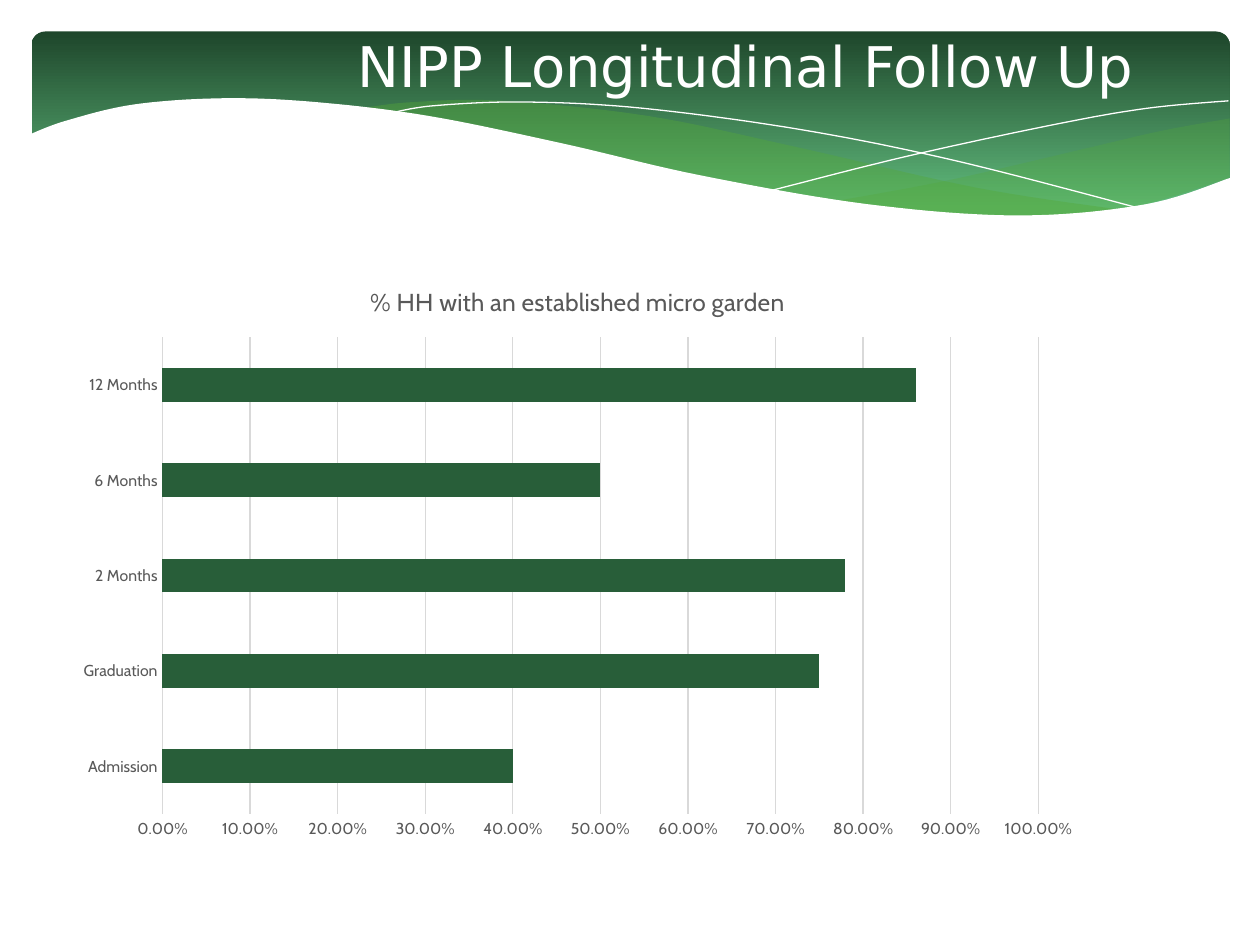
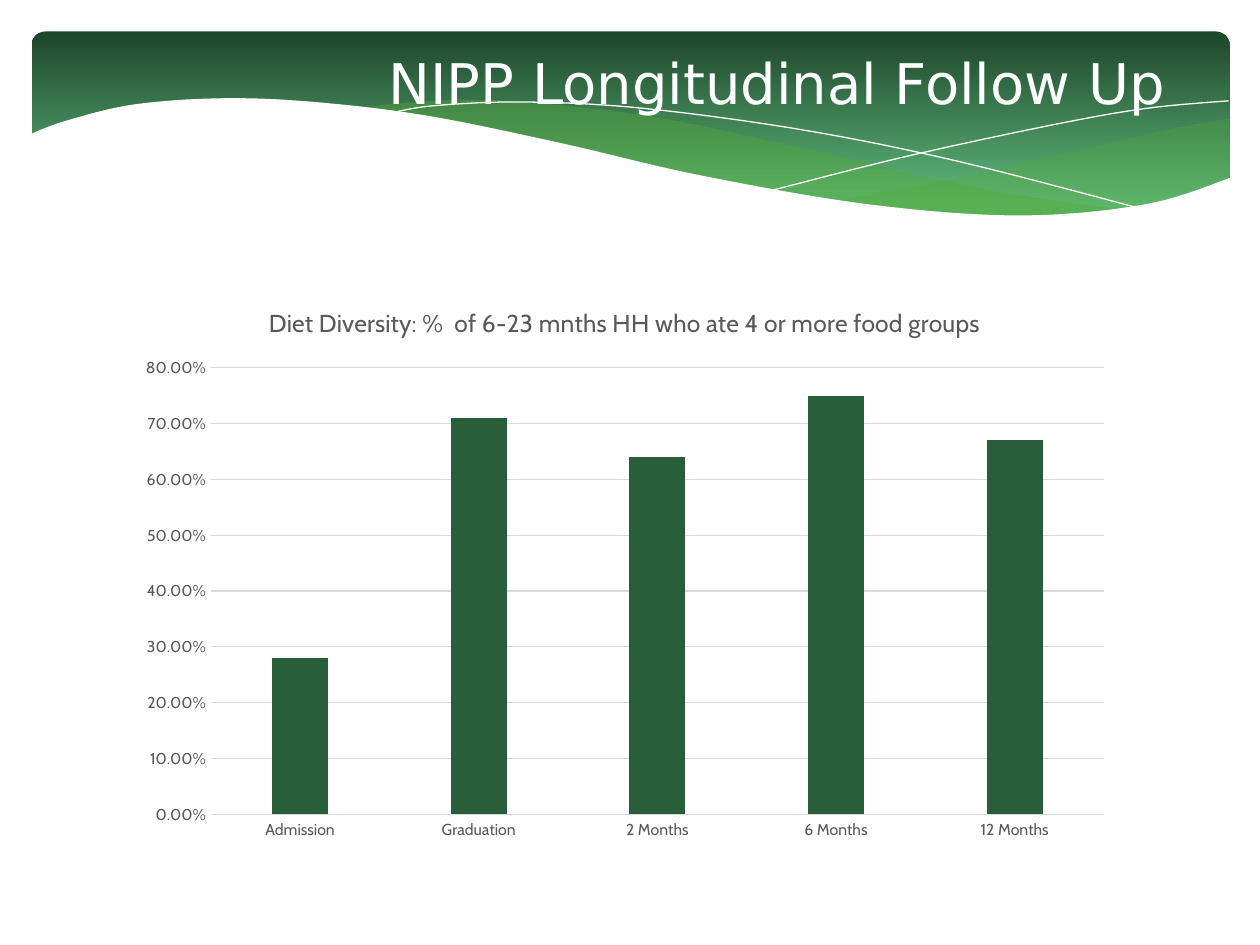
from dataclasses import dataclass
from itertools import chain
from typing import Any

from pptx import Presentation
from pptx.chart.data import CategoryChartData as ChartData
from pptx.dml.color import RGBColor
from pptx.enum.chart import XL_CHART_TYPE as Kind, XL_TICK_MARK as Tick
from pptx.enum.shapes import MSO_SHAPE as Form
from pptx.enum.text import MSO_ANCHOR as Anchor, PP_ALIGN as Align
from pptx.oxml.ns import qn
from pptx.util import Emu, Pt
from lxml.etree import SubElement

PX = 9144
STEPS = 10
WHITE, LEAF, BAR = "FFFFFF", "54A838", "285E39"
DARK, MINT = "1E462B", "61BC7D"
GREY, RULE = "595959", "D9D9D9"
HEAD, BODY = "DejaVu Sans", "Cabin"
TITLE = "NIPP Longitudinal Follow Up"
STAGES = ("Admission", "Graduation", "2 Months", "6 Months", "12 Months")

Knot = tuple[float, float]
Curve = tuple[Knot, ...]


@dataclass(frozen=True)
class Box:
    left: int
    top: int
    width: int
    height: int

    def emu(self) -> tuple[Emu, ...]:
        sides = (self.left, self.top, self.width, self.height)
        return tuple(Emu(side * PX) for side in sides)


@dataclass(frozen=True)
class Wave:
    curves: tuple[Curve, ...]
    fill: str | None = None
    alpha: int = 100


@dataclass(frozen=True)
class Graph:
    title: str
    kind: Any
    box: Box
    vals: tuple[float, ...]
    top: float
    gap: int
    lap: int


@dataclass(frozen=True)
class Page:
    head: Box
    graph: Graph


BAND = Box(25, 25, 951, 156)

WAVES = (
    Wave((
        ((976, 94), (921, 104), (861, 118), (753, 143), (661, 160)),
        ((661, 160), (757, 170), (835, 172), (905, 163), (976, 141)),
    ), LEAF, 29),
    Wave((
        ((893, 167), (775, 149), (629, 116), (514, 92), (399, 80), (328, 81),
         (286, 86)),
        ((286, 86), (362, 97), (449, 116), (566, 143), (680, 163), (773, 172),
         (838, 172), (893, 167)),
    ), LEAF, 40),
    Wave((((309, 90), (344, 84), (416, 81), (510, 86), (636, 103), (760, 128),
           (907, 166)),)),
    Wave((((613, 151), (720, 124), (836, 99), (910, 86), (975, 80)),)),
    Wave((
        ((977, 141), (910, 162), (809, 171), (688, 162), (555, 139), (447, 114),
         (340, 92), (250, 81), (177, 78), (106, 83), (52, 96), (23, 107)),
        ((23, 224), (977, 224)),
    ), WHITE),
)

PAGES = (
    Page(Box(142, -17, 900, 137), Graph(
        "% HH with an established micro garden", Kind.BAR_CLUSTERED,
        Box(50, 208, 817, 467), (0.4, 0.75, 0.78, 0.5, 0.86), 1.0, 182, 0)),
    Page(Box(167, -3, 900, 137), Graph(
        "Diet Diversity: %  of 6-23 mnths HH who ate 4 or more food groups",
        Kind.COLUMN_CLUSTERED, Box(100, 225, 792, 450),
        (0.28, 0.71, 0.64, 0.75, 0.67), 0.8, 219, -27)),
)


def tint(code: str) -> RGBColor:
    return RGBColor.from_string(code)


def style(font: Any, size: int, ink: str, face: str) -> None:
    font.size, font.name, font.bold = Pt(size), face, False
    font.color.rgb = tint(ink)


def write(frame: Any, text: str, *, size: int, ink: str, face: str) -> None:
    para = frame.paragraphs[0]
    para.alignment = Align.CENTER
    run = para.add_run()
    run.text = text
    style(run.font, size, ink, face)


def stroke(line: Any, ink: str, width: float) -> None:
    line.color.rgb = tint(ink)
    line.width = Pt(width)


def blend(a: float, b: float, c: float, d: float, t: float) -> float:
    bend = 2 * a - 5 * b + 4 * c - d
    twist = 3 * (b - c) + d - a
    return b + t * (c - a + t * (bend + t * twist)) / 2


def smooth(curve: Curve) -> list[Knot]:
    ends = (curve[0], *curve, curve[-1])
    dots = [
        tuple(blend(*axis, step / STEPS) * PX for axis in zip(*span))
        for span in zip(ends, ends[1:], ends[2:], ends[3:])
        for step in range(STEPS)
    ]
    return [*dots, tuple(side * PX for side in curve[-1])]


def draw_band(slide: Any) -> None:
    band = slide.shapes.add_shape(Form.ROUNDED_RECTANGLE, *BAND.emu())
    band.shadow.inherit = False
    band.adjustments[0] = 0.07
    band.line.fill.background()
    band.fill.gradient()
    band.fill.gradient_angle = 270
    for stop, ink, spot in zip(band.fill.gradient_stops, (DARK, MINT), (0, 0.9)):
        stop.color.rgb = tint(ink)
        stop.position = spot


def draw_wave(slide: Any, wave: Wave) -> None:
    first, *rest = chain.from_iterable(map(smooth, wave.curves))
    pen = slide.shapes.build_freeform(*first)
    pen.add_line_segments(rest, close=wave.fill is not None)
    shape = pen.convert_to_shape()
    shape.shadow.inherit = False
    if wave.fill is None:
        shape.fill.background()
        stroke(shape.line, WHITE, 0)
        return
    shape.fill.solid()
    shape.fill.fore_color.rgb = tint(wave.fill)
    shape.line.fill.background()
    if wave.alpha < 100:
        ink = next(shape.element.spPr.iter(qn("a:srgbClr")))
        SubElement(ink, qn("a:alpha")).set("val", str(wave.alpha * 1000))


def draw_head(slide: Any, box: Box) -> None:
    frame = slide.shapes.add_textbox(*box.emu()).text_frame
    frame.word_wrap = True
    frame.vertical_anchor = Anchor.MIDDLE
    write(frame, TITLE, size=32, ink=WHITE, face=HEAD)


def draw_graph(slide: Any, graph: Graph) -> None:
    data = ChartData(number_format="0.00%")
    data.categories = STAGES
    data.add_series("Series 1", graph.vals)
    chart = slide.shapes.add_chart(graph.kind, *graph.box.emu(), data).chart
    style(chart.font, 10, "000000", BODY)
    chart.has_legend = False
    chart.has_title = True
    write(chart.chart_title.text_frame, graph.title, size=14, ink=GREY, face=BODY)

    plot = chart.plots[0]
    plot.vary_by_categories = False
    plot.gap_width, plot.overlap = graph.gap, graph.lap
    fill = plot.series[0].format.fill
    fill.solid()
    fill.fore_color.rgb = tint(BAR)

    cats, vals = chart.category_axis, chart.value_axis
    for axis in (cats, vals):
        axis.major_tick_mark = axis.minor_tick_mark = Tick.NONE
        style(axis.tick_labels.font, 9, GREY, BODY)
    cats.has_major_gridlines = False
    stroke(cats.format.line, RULE, 0.75)
    vals.format.line.fill.background()
    vals.has_major_gridlines = True
    stroke(vals.major_gridlines.format.line, RULE, 0.75)
    vals.minimum_scale, vals.maximum_scale, vals.major_unit = 0, graph.top, 0.1
    vals.tick_labels.number_format = "0.00%"
    vals.tick_labels.number_format_is_linked = False


def main() -> None:
    deck = Presentation()
    deck.slide_width, deck.slide_height = Emu(1000 * PX), Emu(750 * PX)
    for page in PAGES:
        slide = deck.slides.add_slide(deck.slide_layouts[6])
        draw_band(slide)
        for wave in WAVES:
            draw_wave(slide, wave)
        draw_head(slide, page.head)
        draw_graph(slide, page.graph)
    deck.save("out.pptx")


if __name__ == "__main__":
    main()
